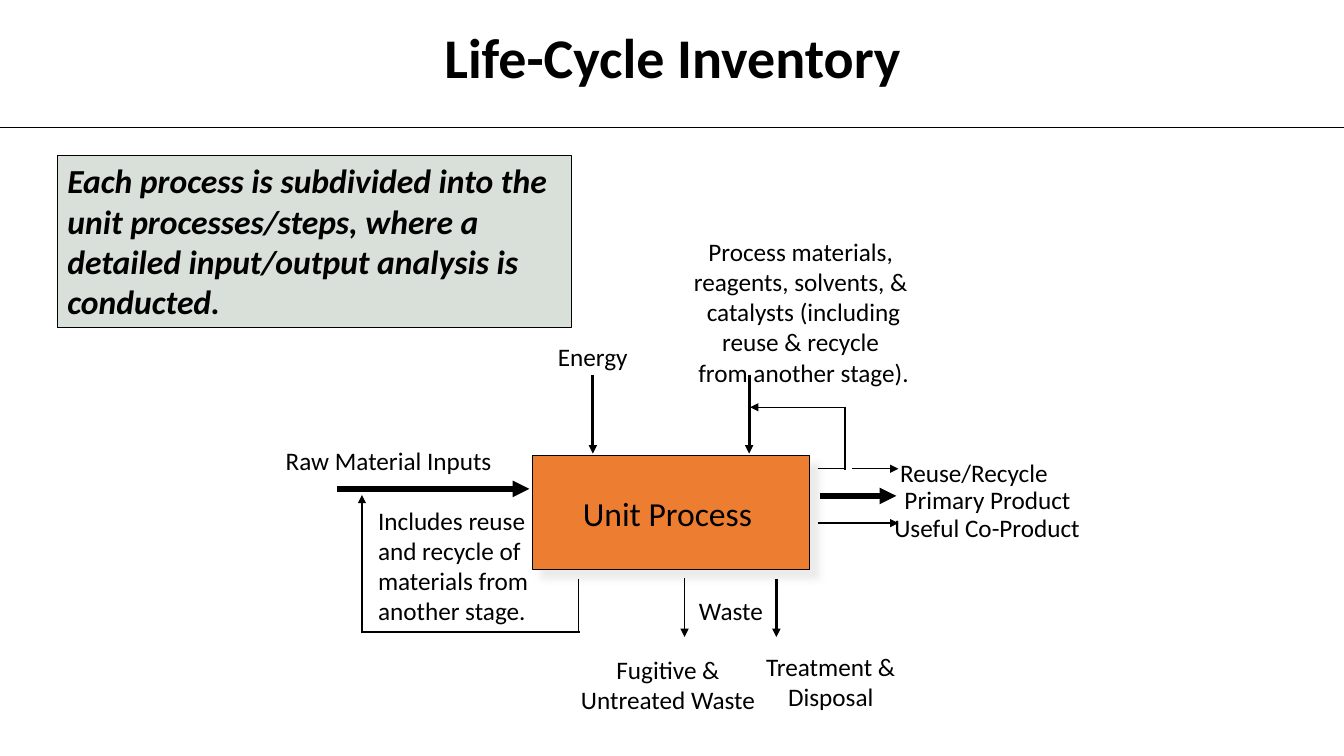
from lxml.etree import SubElement
from pptx import Presentation
from pptx.dml.color import RGBColor
from pptx.enum.shapes import MSO_CONNECTOR, MSO_SHAPE
from pptx.enum.text import MSO_ANCHOR, MSO_AUTO_SIZE, PP_ALIGN
from pptx.oxml.ns import qn
from pptx.util import Inches, Pt

BLACK = RGBColor(0x00, 0x00, 0x00)
ORANGE = RGBColor(0xED, 0x7D, 0x31)
DARK_GREEN = RGBColor(0x00, 0x33, 0x00)
SHADOW_GREY = RGBColor(0xE7, 0xE6, 0xE6)
FONT = "Calibri"

LABELS = [
    ("Unit Process", 5.69, 4.85, 1.86, 0.48, 24, PP_ALIGN.CENTER),
    ("Energy", 5.45, 3.35, 0.86, 0.38, 18, PP_ALIGN.CENTER),
    ("Raw Material Inputs", 2.74, 4.38, 2.23, 0.38, 18, PP_ALIGN.CENTER),
    ("Includes reuse\nand recycle of\nmaterials from\nanother stage.", 3.67, 4.97, 1.67, 1.29, 18, PP_ALIGN.LEFT),
    ("Fugitive &\nUntreated Waste", 5.67, 6.45, 1.91, 0.69, 18, PP_ALIGN.CENTER),
    ("Treatment &\nDisposal", 7.51, 6.42, 1.46, 0.69, 18, PP_ALIGN.CENTER),
    ("Waste", 6.83, 5.87, 0.84, 0.38, 18, PP_ALIGN.CENTER),
    ("Primary Product", 8.88, 4.76, 1.83, 0.38, 18, PP_ALIGN.CENTER),
    ("Useful Co-Product", 8.78, 5.04, 2.02, 0.38, 18, PP_ALIGN.CENTER),
    ("Reuse/Recycle", 8.81, 4.5, 1.7, 0.38, 18, PP_ALIGN.CENTER),
    (
        "Process materials, \nreagents, solvents, & \ncatalysts (including\nreuse & recycle \nfrom another stage).",
        6.79, 2.3, 2.36, 1.6, 18, PP_ALIGN.CENTER,
    ),
]

ARROWS = [
    (7.43, 3.72, 7.43, 4.5, 2),
    (8.13, 4.92, 8.89, 4.92, 4),
    (8.11, 5.19, 8.91, 5.19, 1),
    (8.37, 4.04, 7.44, 4.04, 1),
    (5.88, 3.72, 5.88, 4.5, 2),
    (3.34, 4.85, 5.25, 4.85, 4),
    (3.59, 6.28, 3.59, 4.91, 1),
    (6.79, 5.73, 6.79, 6.32, 1),
    (7.7, 5.74, 7.7, 6.32, 2),
    (8.45, 4.65, 8.91, 4.65, 1),
]

RECYCLE_LINES = [
    (8.11, 4.65, 8.37, 4.65),
    (8.38, 4.66, 8.38, 4.04),
    (5.74, 5.74, 5.74, 6.26),
    (5.75, 6.27, 3.58, 6.27),
]


def format_text(text_frame, size, alignment, bold=False, italic=False):
    for paragraph in text_frame.paragraphs:
        paragraph.alignment = alignment
        for run in paragraph.runs:
            run.font.name = FONT
            run.font.size = Pt(size)
            run.font.bold = bold
            run.font.italic = italic
            run.font.color.rgb = BLACK


def set_title(slide):
    title = slide.shapes.title
    title.left, title.top = Inches(2.83), Inches(0.24)
    title.width, title.height = Inches(7.68), Inches(0.71)
    text_frame = title.text_frame
    text_frame.text = "Life-Cycle Inventory"
    text_frame.word_wrap = True
    text_frame.auto_size = MSO_AUTO_SIZE.NONE
    text_frame.vertical_anchor = MSO_ANCHOR.MIDDLE
    text_frame.paragraphs[0].line_spacing = 0.9
    format_text(text_frame, 40, PP_ALIGN.CENTER, bold=True)


def add_box(slide, left, top, width, height, color):
    box = slide.shapes.add_shape(
        MSO_SHAPE.RECTANGLE, Inches(left), Inches(top), Inches(width), Inches(height)
    )
    box.shadow.inherit = False
    box.fill.solid()
    box.fill.fore_color.rgb = color
    box.line.color.rgb = BLACK
    box.line.width = Pt(1)
    return box


def add_alpha(color_element, percent):
    SubElement(color_element, qn("a:alpha"), val=str(percent * 1000))


def add_process_box(slide):
    box = add_box(slide, 5.28, 4.52, 2.75, 1.13, ORANGE)
    effects = box._element.spPr.find(qn("a:effectLst"))
    shadow = SubElement(
        effects, qn("a:outerShdw"), blurRad=str(Pt(5)), dist=str(Pt(8.5)), dir="2700000", algn="tl"
    )
    add_alpha(SubElement(shadow, qn("a:srgbClr"), val=str(SHADOW_GREY)), 75)


def add_explanation(slide):
    box = add_box(slide, 0.57, 1.54, 5.1, 1.71, DARK_GREEN)
    add_alpha(box._element.spPr.find(qn("a:solidFill"))[0], 15)
    text_frame = box.text_frame
    text_frame.text = (
        "Each process is subdivided into the unit processes/steps, "
        "where a detailed input/output analysis is conducted."
    )
    text_frame.word_wrap = True
    text_frame.vertical_anchor = MSO_ANCHOR.TOP
    format_text(text_frame, 24, PP_ALIGN.LEFT, bold=True, italic=True)


def add_line(slide, start_x, start_y, end_x, end_y, width=1, arrow=False):
    connector = slide.shapes.add_connector(
        MSO_CONNECTOR.STRAIGHT, Inches(start_x), Inches(start_y), Inches(end_x), Inches(end_y)
    )
    connector.line.color.rgb = BLACK
    connector.line.width = Pt(width)
    if arrow:
        SubElement(connector.line._get_or_add_ln(), qn("a:tailEnd"), type="triangle")
    SubElement(connector._element.spPr, qn("a:effectLst"))


def add_label(slide, text, left, top, width, height, size, alignment):
    label = slide.shapes.add_textbox(Inches(left), Inches(top), Inches(width), Inches(height))
    text_frame = label.text_frame
    text_frame.margin_left = text_frame.margin_right = Inches(0.08)
    text_frame.margin_top = text_frame.margin_bottom = Inches(0.04)
    text_frame.word_wrap = False
    text_frame.auto_size = MSO_AUTO_SIZE.SHAPE_TO_FIT_TEXT
    text_frame.text = text
    format_text(text_frame, size, alignment)


def main():
    presentation = Presentation()
    presentation.slide_width = Inches(13.33)
    presentation.slide_height = Inches(7.5)
    slide = presentation.slides.add_slide(presentation.slide_layouts[5])
    set_title(slide)
    add_process_box(slide)
    for arrow in ARROWS:
        add_line(slide, *arrow, arrow=True)
    for line in RECYCLE_LINES:
        add_line(slide, *line)
    for label in LABELS:
        add_label(slide, *label)
    add_explanation(slide)
    add_line(slide, 0, 1.26, 13.33, 1.26, width=0.5)
    presentation.save("out.pptx")


main()
